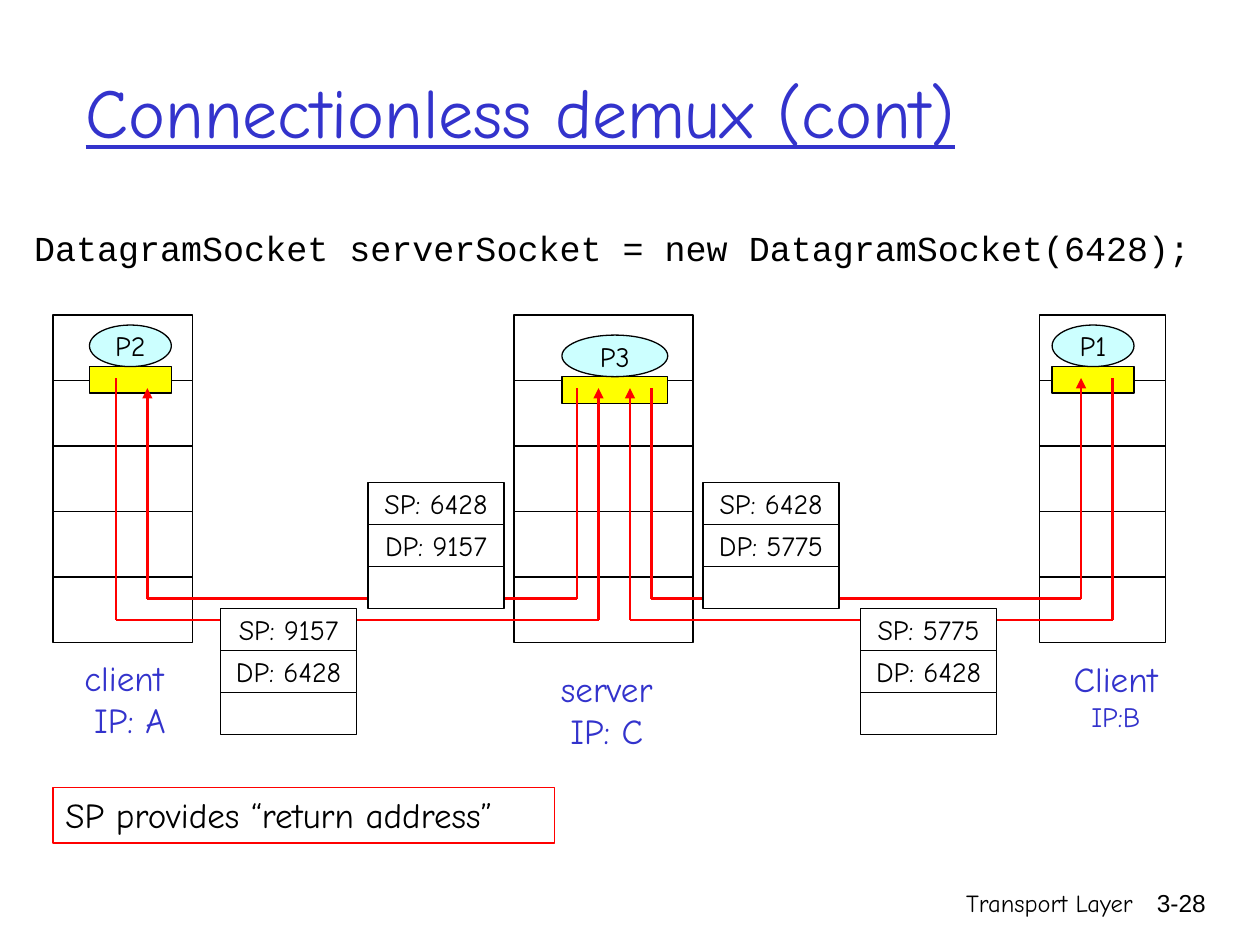
from lxml import etree
from pptx import Presentation
from pptx.dml.color import RGBColor
from pptx.enum import shapes, text
from pptx.oxml.ns import qn
from pptx.util import Inches, Pt

BLACK, WHITE, BLUE, RED = "000000", "FFFFFF", "3333CC", "FF0000"
YELLOW, CYAN = "FFFF00", "CCFFFF"
SANS = "Comic Neue"
LEFT, CENTER, RIGHT = text.PP_ALIGN.LEFT, text.PP_ALIGN.CENTER, text.PP_ALIGN.RIGHT
TOP, MIDDLE = text.MSO_ANCHOR.TOP, text.MSO_ANCHOR.MIDDLE
RECTANGLE, OVAL = shapes.MSO_SHAPE.RECTANGLE, shapes.MSO_SHAPE.OVAL


def color(value):
    return RGBColor.from_string(value)


def write(shape, lines, size=16, name=SANS, ink=BLACK, align=CENTER,
          anchor=TOP, wrap=False, underline=None):
    """Fill a shape with lines; a line may be a (text, size) pair."""
    frame = shape.text_frame
    frame_format = {"word_wrap": wrap, "vertical_anchor": anchor,
                    "auto_size": text.MSO_AUTO_SIZE.NONE}
    for key, value in frame_format.items():
        setattr(frame, key, value)
    for index, line in enumerate(lines):
        words, points = line if isinstance(line, tuple) else (line, size)
        paragraph = frame.add_paragraph() if index else frame.paragraphs[0]
        paragraph.alignment = align
        run = paragraph.add_run()
        run.text = words
        font_format = {"size": Pt(points), "name": name, "underline": underline}
        for key, value in font_format.items():
            setattr(run.font, key, value)
        run.font.color.rgb = color(ink)


def place(shape, box):
    for key, value in zip(("left", "top", "width", "height"), box):
        setattr(shape, key, Inches(value))


def add_text(slide, box, lines, **style):
    write(slide.shapes.add_textbox(*map(Inches, box)), lines, **style)


def add_box(slide, box, fill=None, line=BLACK, kind=RECTANGLE):
    shape = slide.shapes.add_shape(kind, *map(Inches, box))
    shape.shadow.inherit = False
    if fill:
        shape.fill.solid()
        shape.fill.fore_color.rgb = color(fill)
    else:
        shape.fill.background()
    shape.line.color.rgb = color(line)
    shape.line.width = Pt(0.75)
    return shape


def add_wire(slide, start, end, arrow=False):
    wire = slide.shapes.add_connector(
        shapes.MSO_CONNECTOR.STRAIGHT, *map(Inches, (*start, *end)))
    wire.line.color.rgb = color(RED)
    wire.line.width = Pt(1.5)
    if arrow:
        etree.SubElement(wire.line._get_or_add_ln(), qn("a:tailEnd"), type="triangle")
    etree.SubElement(wire._element.spPr, qn("a:effectLst"))


def add_headings(slide):
    title, body = slide.placeholders
    place(title, (0.58, 0.25, 8.5, 1.25))
    write(title, ["Connectionless demux (cont)"], size=40, ink=BLUE,
          align=LEFT, anchor=MIDDLE, wrap=True, underline=True)
    place(body, (0.17, 1.75, 9.5, 0.67))
    write(body, ["DatagramSocket serverSocket = new DatagramSocket(6428);"],
          size=20, name="Courier New", align=LEFT, wrap=True)
    paragraph = body.text_frame.paragraphs[0]
    paragraph.space_before = Pt(4)
    properties = paragraph._p.get_or_add_pPr()
    properties.set("marL", str(Inches(0.38)))
    properties.set("indent", str(Inches(-0.38)))
    etree.SubElement(properties, qn("a:buNone"))


def add_host(slide, box, process, process_box, label, label_box):
    """Draw a five-layer host; the inner boxes are offsets from its corner."""
    left, top, width, height = box
    layer = height / 5
    for row in range(5):
        add_box(slide, (left, top + row * layer, width, layer), WHITE)
    dx, dy, process_width = process_box
    x, y = left + dx, top + dy
    add_box(slide, (x, y + 0.33, process_width, 0.21), YELLOW)
    oval = add_box(slide, (x, y, process_width, 0.33), CYAN, kind=OVAL)
    write(oval, [process], anchor=MIDDLE)
    dx, dy, label_width = label_box
    add_text(slide, (left + dx, top + dy, label_width, 0.77), label, size=20, ink=BLUE)


def add_path(slide, start, level, end):
    """Run a wire down from start, across at level, and up to an arrow at end."""
    corners = [start, (start[0], level), (end[0], level), end]
    for index in range(3):
        add_wire(slide, corners[index], corners[index + 1], arrow=index == 2)


def add_packet(slide, left, top, source, destination):
    row_height = 1 / 3
    for row, words in enumerate((f"SP: {source}", f"DP: {destination}", "")):
        cell = add_box(slide, (left, top + row * row_height, 1.08, row_height), WHITE)
        if words:
            write(cell, [words], anchor=MIDDLE)


def add_footer(slide):
    add_text(slide, (5.92, 7, 3.17, 0.5), ["Transport Layer"],
             size=14, align=RIGHT, wrap=True)
    add_text(slide, (8.93, 7, 0.74, 0.5), ["3-28"],
             size=14, name="Arial", align=RIGHT, wrap=True)


def main():
    presentation = Presentation()
    presentation.slide_width, presentation.slide_height = Inches(10), Inches(7.5)
    slide = presentation.slides.add_slide(presentation.slide_layouts[1])
    add_headings(slide)

    hosts = [
        ((0.42, 2.5, 1.11, 2.6), "P2", (0.29, 0.08, 0.65),
         ["client", " IP: A"], (0.09, 2.66, 0.95)),
        ((8.25, 2.5, 1, 2.6), "P1", (0.1, 0.08, 0.65),
         ["Client", ("IP:B", 16)], (0.13, 2.67, 0.95)),
        ((4.08, 2.5, 1.42, 2.6), "P3", (0.38, 0.16, 0.84),
         ["server", "IP: C"], (0.21, 2.75, 1.05)),
    ]
    for host in hosts:
        add_host(slide, *host)

    reply_level, request_level = 4.75, 4.92
    add_path(slide, (0.92, 3), request_level, (4.75, 3.08))
    add_path(slide, (4.58, 3.08), reply_level, (1.17, 3.08))
    add_path(slide, (8.83, 3), request_level, (5, 3.08))
    add_path(slide, (5.17, 3.08), reply_level, (8.58, 3))

    for packet in [(2.92, 3.83, 6428, 9157), (1.75, 4.83, 9157, 6428),
                   (5.58, 3.83, 6428, 5775), (6.83, 4.83, 5775, 6428)]:
        add_packet(slide, *packet)

    note = add_box(slide, (0.42, 6.25, 3.98, 0.44), line=RED)
    write(note, ["SP provides “return address”"], size=20, align=LEFT, wrap=True)
    add_footer(slide)
    presentation.save("out.pptx")


if __name__ == "__main__":
    main()
